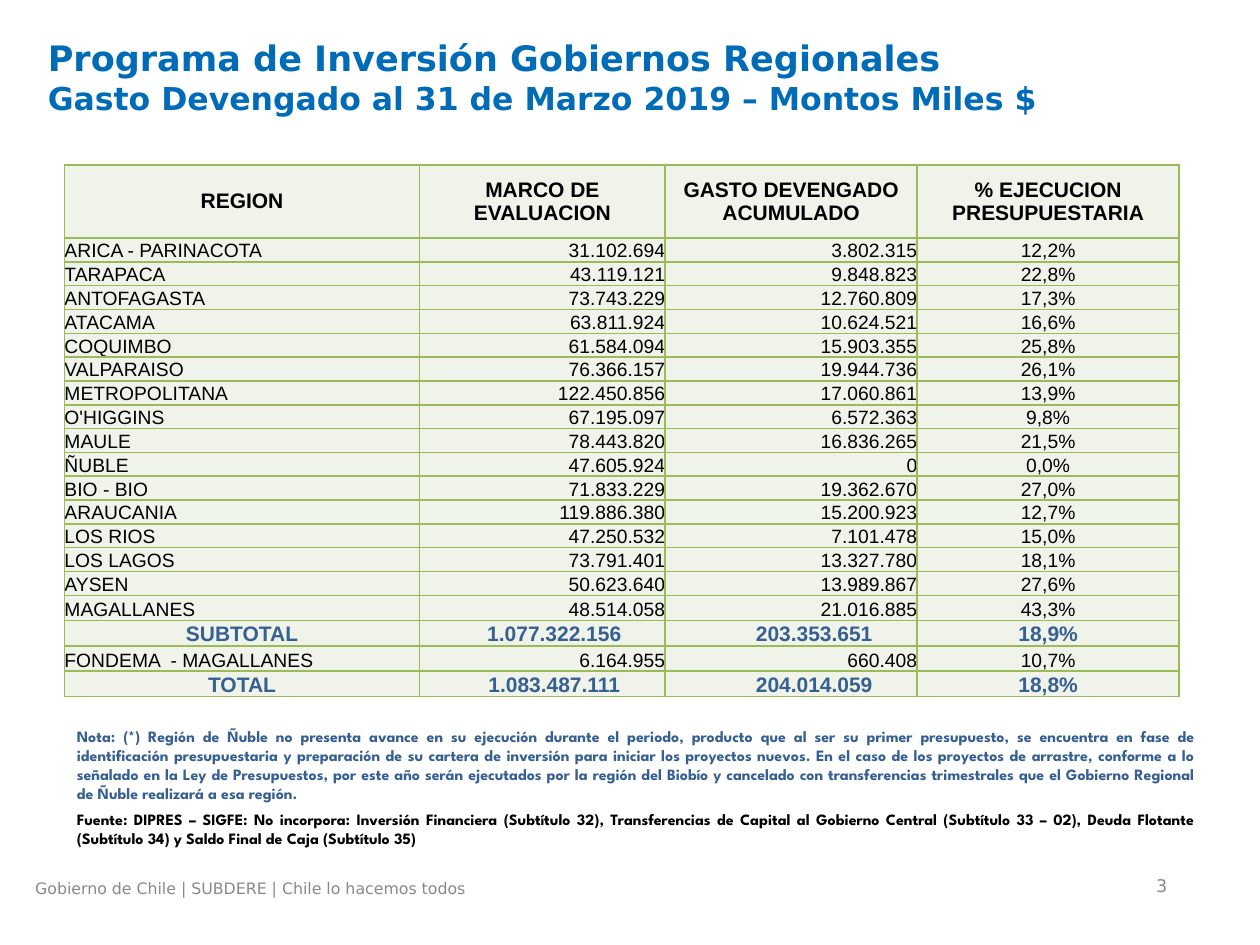
from lxml.etree import SubElement
from pptx import Presentation
from pptx.dml.color import RGBColor
from pptx.enum.text import MSO_ANCHOR as Anchor, MSO_AUTO_SIZE as AutoSize, PP_ALIGN as Align
from pptx.oxml.ns import qn
from pptx.util import Cm, Pt

# Colours
BLUE = RGBColor(0x00, 0x6C, 0xB7)
NAVY = RGBColor(0x37, 0x60, 0x92)
BLACK = RGBColor(0x00, 0x00, 0x00)
GREY = RGBColor(0x89, 0x89, 0x89)
GREEN = RGBColor(0x9B, 0xBB, 0x59)
PALE = RGBColor(0xEF, 0xF3, 0xEA)

# Font formats
TITLE = dict(name="DejaVu Sans", size=Pt(20), bold=True, color=BLUE)
SUBTITLE = {**TITLE, "size": Pt(18)}
FOOTER = dict(name="DejaVu Sans", size=Pt(9), bold=False, color=GREY)
PAGE = {**FOOTER, "size": Pt(10)}
NOTE = dict(name="League Spartan", size=Pt(9), bold=True, color=NAVY)
SOURCE = {**NOTE, "color": BLACK}
HEAD = dict(name="Arial", size=Pt(12), bold=True, color=BLACK)
BODY = {**HEAD, "size": Pt(11), "bold": False}
SUM = {**HEAD, "color": NAVY}

# Table content and measures
HEADERS = ("REGION", "MARCO DE EVALUACION", "GASTO DEVENGADO ACUMULADO",
           "% EJECUCION PRESUPUESTARIA")
ROWS = (
    ("ARICA - PARINACOTA", "31.102.694", "3.802.315", "12,2%"),
    ("TARAPACA", "43.119.121", "9.848.823", "22,8%"),
    ("ANTOFAGASTA", "73.743.229", "12.760.809", "17,3%"),
    ("ATACAMA", "63.811.924", "10.624.521", "16,6%"),
    ("COQUIMBO", "61.584.094", "15.903.355", "25,8%"),
    ("VALPARAISO", "76.366.157", "19.944.736", "26,1%"),
    ("METROPOLITANA", "122.450.856", "17.060.861", "13,9%"),
    ("O'HIGGINS", "67.195.097", "6.572.363", "9,8%"),
    ("MAULE", "78.443.820", "16.836.265", "21,5%"),
    ("ÑUBLE", "47.605.924", "0", "0,0%"),
    ("BIO - BIO", "71.833.229", "19.362.670", "27,0%"),
    ("ARAUCANIA", "119.886.380", "15.200.923", "12,7%"),
    ("LOS RIOS", "47.250.532", "7.101.478", "15,0%"),
    ("LOS LAGOS", "73.791.401", "13.327.780", "18,1%"),
    ("AYSEN", "50.623.640", "13.989.867", "27,6%"),
    ("MAGALLANES", "48.514.058", "21.016.885", "43,3%"),
    ("SUBTOTAL", "1.077.322.156", "203.353.651", "18,9%"),
    ("FONDEMA  - MAGALLANES", "6.164.955", "660.408", "10,7%"),
    ("TOTAL", "1.083.487.111", "204.014.059", "18,8%"),
)
SUM_ROWS = ("SUBTOTAL", "TOTAL")
COL_WIDTHS = (7.16, 4.95, 5.08, 5.28)
ROW_HEIGHTS = (1.47,) + (0.48,) * 15 + (0.51,) * 4
BODY_ALIGN = (Align.LEFT, Align.RIGHT, Align.RIGHT, Align.CENTER)
SUM_INDENTS = (0, 0.48, 0.93, 0)

NOTE_TEXT = (
    "Nota: (*) Región de Ñuble no presenta avance en su ejecución durante el periodo, "
    "producto que al ser su primer presupuesto, se encuentra en fase de identificación "
    "presupuestaria y preparación de su cartera de inversión para iniciar los proyectos "
    "nuevos. En el caso de los proyectos de arrastre, conforme a lo señalado en la Ley de "
    "Presupuestos, por este año serán ejecutados por la región del Biobío y cancelado con "
    "transferencias trimestrales que el Gobierno Regional de Ñuble realizará a esa región.")
SOURCE_TEXT = (
    "Fuente: DIPRES – SIGFE: No incorpora: Inversión Financiera (Subtítulo 32), "
    "Transferencias de Capital al Gobierno Central (Subtítulo 33 – 02), Deuda Flotante "
    "(Subtítulo 34) y Saldo Final de Caja (Subtítulo 35)")


def add_run(p, text, fmt):
    r = p.add_run()
    r.text = text
    for key, value in fmt.items():
        if key == "color":
            r.font.color.rgb = value
        else:
            setattr(r.font, key, value)


def add_title(s, box, lines):
    sp = s.shapes.title
    sp.left, sp.top, sp.width, sp.height = map(Cm, box)
    tf = sp.text_frame
    tf.vertical_anchor, tf.auto_size = Anchor.TOP, AutoSize.NONE
    p = tf.paragraphs[0]
    p.alignment = Align.LEFT
    for i, (text, fmt) in enumerate(lines):
        if i:
            p.add_line_break()
        add_run(p, text, fmt)


def add_text(s, box, paragraphs, align=Align.LEFT, anchor=Anchor.TOP):
    tf = s.shapes.add_textbox(*map(Cm, box)).text_frame
    tf.word_wrap, tf.vertical_anchor = True, anchor
    for i, (text, fmt) in enumerate(paragraphs):
        p = tf.add_paragraph() if i else tf.paragraphs[0]
        p.alignment = align
        p.space_before = Pt(4) if i else Pt(0)
        add_run(p, text, fmt)


def set_borders(cell):
    tc_pr = cell._tc.get_or_add_tcPr()
    for i, side in enumerate(("lnL", "lnR", "lnT", "lnB")):
        ln = SubElement(tc_pr, qn(f"a:{side}"), w=str(Pt(1)))
        fill = SubElement(ln, qn("a:solidFill"))
        SubElement(fill, qn("a:srgbClr"), val=str(GREEN))
        tc_pr.insert(i, ln)  # borders come before the fill


def fill_cell(cell, text, fmt, align, anchor, indent=0):
    margins = dict(margin_left=Cm(indent), margin_right=0, margin_top=0, margin_bottom=0)
    for key, value in margins.items():
        setattr(cell, key, value)
    cell.vertical_anchor = anchor
    cell.fill.solid()
    cell.fill.fore_color.rgb = PALE
    set_borders(cell)
    p = cell.text_frame.paragraphs[0]
    p.alignment = align
    add_run(p, text, fmt)


def add_budget_table(s, left, top):
    size = len(ROW_HEIGHTS), len(COL_WIDTHS)
    table = s.shapes.add_table(*size, Cm(left), Cm(top), Cm(sum(COL_WIDTHS)),
                               Cm(sum(ROW_HEIGHTS))).table
    for col, width in zip(table.columns, COL_WIDTHS):
        col.width = Cm(width)
    for row, height in zip(table.rows, ROW_HEIGHTS):
        row.height = Cm(height)
    for j, text in enumerate(HEADERS):
        fill_cell(table.cell(0, j), text, HEAD, Align.CENTER, Anchor.MIDDLE)
    for i, values in enumerate(ROWS, start=1):
        is_sum = values[0] in SUM_ROWS
        for j, text in enumerate(values):
            fill_cell(table.cell(i, j), text, SUM if is_sum else BODY,
                      Align.CENTER if is_sum else BODY_ALIGN[j], Anchor.BOTTOM,
                      SUM_INDENTS[j] if is_sum else 0)


def main():
    prs = Presentation()
    prs.slide_width, prs.slide_height = Cm(25.4), Cm(19.05)
    s = prs.slides.add_slide(prs.slide_layouts[5])

    # Heading
    add_title(s, (0.71, 0.61, 22.1, 2.39), (
        ("Programa de Inversión Gobiernos Regionales", TITLE),
        ("Gasto Devengado al 31 de Marzo 2019 – Montos Miles $", SUBTITLE)))

    # Budget by region
    add_budget_table(s, 1.3, 3.33)

    # Note and source
    add_text(s, (1.3, 14.53, 23.01, 2.77),
             ((NOTE_TEXT, NOTE), (SOURCE_TEXT, SOURCE)), Align.JUSTIFY)

    # Footer and page number
    add_text(s, (0.46, 17.58, 16.46, 0.69),
             (("Gobierno de Chile | SUBDERE | Chile lo hacemos todos", FOOTER),))
    add_text(s, (17.86, 17.58, 5.92, 0.53), (("3", PAGE),), Align.RIGHT, Anchor.MIDDLE)

    prs.save("out.pptx")


if __name__ == "__main__":
    main()
